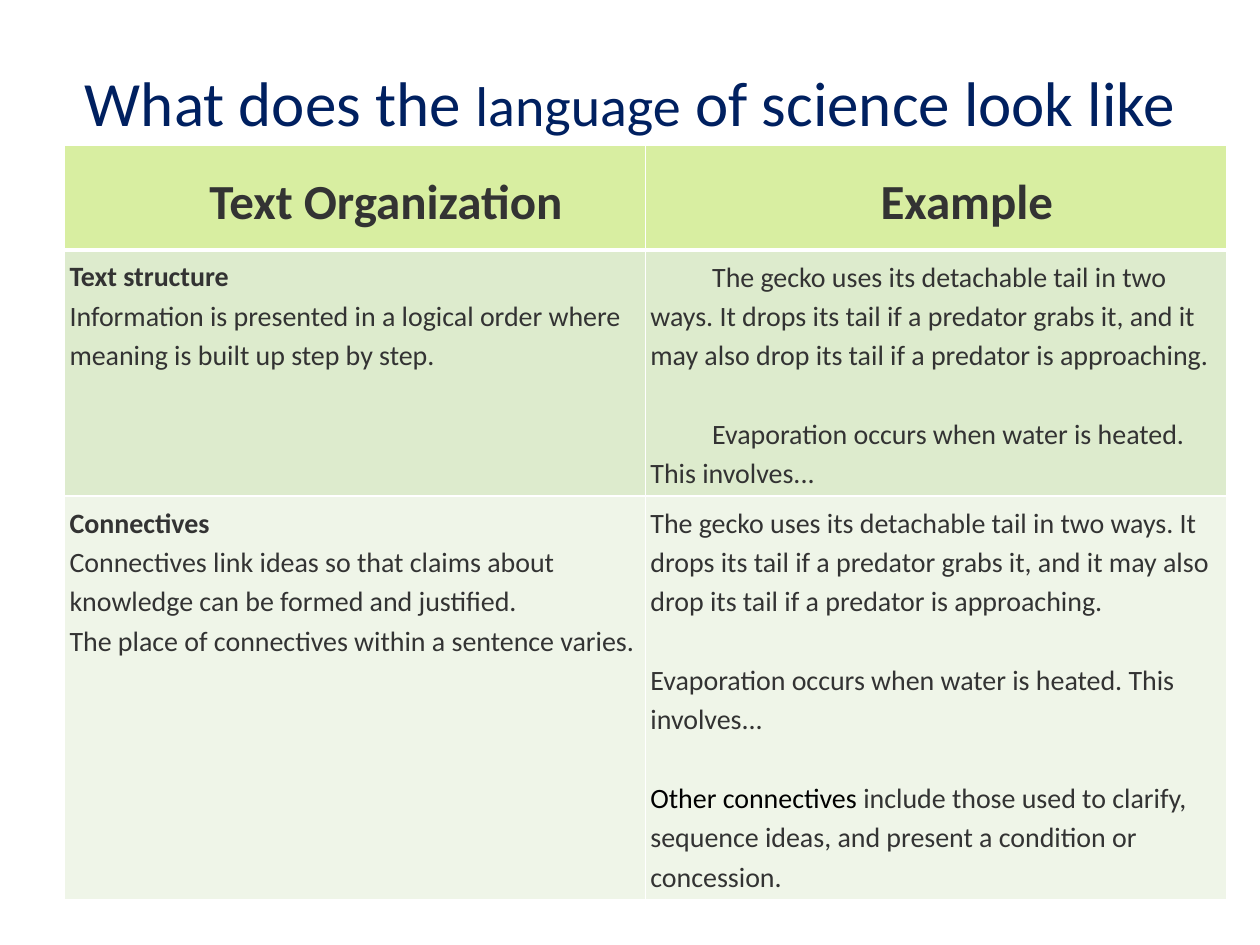
from dataclasses import dataclass, field
from lxml import etree
from pptx import Presentation
from pptx.dml.color import RGBColor
from pptx.enum import text as t
from pptx.oxml.ns import qn
from pptx.util import Pt


@dataclass(frozen=True)
class Theme:
    font: str = "Calibri"
    navy: str = "002060"
    ink: str = "333333"
    black: str = "000000"
    line: str = "FFFFFF"
    fills: tuple = ("D8EEA1", "DDEBCD", "EFF5E8")
    title: int = 36
    small: int = 32
    head: int = 28
    body: int = 16
    inset: float = 2.88
    indent: float = 35.28
    gap: float = 22.46  # one line of body text


@dataclass(frozen=True)
class Run:
    text: str
    bold: bool = False
    color: str = Theme.ink
    size: int = Theme.body


@dataclass(frozen=True)
class Para:
    runs: list
    indent: float = 0
    before: float = 0
    align: t.PP_ALIGN = t.PP_ALIGN.LEFT


@dataclass(frozen=True)
class Cell:
    paras: list = field(default_factory=list)
    anchor: t.MSO_ANCHOR = t.MSO_ANCHOR.MIDDLE


TH = Theme()
TOP = t.MSO_ANCHOR.TOP
GECKO = ("The gecko uses its detachable tail in two ways. It drops its tail if a "
         "predator grabs it, and it may also drop its tail if a predator is approaching.")
WATER = "Evaporation occurs when water is heated. This involves..."


def add_run(para, run: Run) -> None:
    part = para.add_run()
    part.text = run.text
    look = {"name": TH.font, "size": Pt(run.size), "bold": run.bold}
    for key, value in look.items():
        setattr(part.font, key, value)
    part.font.color.rgb = RGBColor.from_string(run.color)


def add_para(para, data: Para) -> None:
    look = {"alignment": data.align, "line_spacing": 1.15,
            "space_before": Pt(data.before)}
    for key, value in look.items():
        setattr(para, key, value)
    if data.indent:
        props = para._p.get_or_add_pPr()
        props.set("marL", "0")
        props.set("indent", str(Pt(data.indent)))
    for run in data.runs:
        add_run(para, run)


def add_edges(cell, foot: float) -> None:
    props = cell._tc.get_or_add_tcPr()
    widths = {"lnL": 1, "lnR": 1, "lnT": 1, "lnB": foot}
    for spot, (tag, width) in enumerate(widths.items()):
        edge = etree.Element(qn(f"a:{tag}"), w=str(Pt(width)))
        fill = etree.SubElement(edge, qn("a:solidFill"))
        etree.SubElement(fill, qn("a:srgbClr"), val=TH.line)
        props.insert(spot, edge)


def fill_cell(cell, data: Cell, color: str, foot: float) -> None:
    for side in ("left", "right", "top", "bottom"):
        setattr(cell, f"margin_{side}", Pt(TH.inset))
    cell.vertical_anchor = data.anchor
    cell.fill.solid()
    cell.fill.fore_color.rgb = RGBColor.from_string(color)
    add_edges(cell, foot)
    frame = cell.text_frame
    for num, para in enumerate(data.paras):
        add_para(frame.add_paragraph() if num else frame.paragraphs[0], para)


def head(label: str) -> Cell:
    run = Run(label, True, size=TH.head)
    return Cell([Para([run], TH.indent, align=t.PP_ALIGN.CENTER)])


def topic(name: str, *lines: str) -> Cell:
    return Cell([Para([Run(name, True)])] + [Para([Run(s)]) for s in lines], TOP)


def sample(indent: float = 0) -> list:
    return [Para([Run(GECKO)], indent), Para([Run(WATER)], indent, TH.gap)]


ROWS = [
    [head("Text Organization"), head("Example")],
    [topic("Text structure",
           "Information is presented in a logical order where meaning is built up "
           "step by step."),
     Cell(sample(TH.indent))],
    [topic("Connectives",
           "Connectives link ideas so that claims about knowledge can be formed "
           "and justified.",
           "The place of connectives within a sentence varies."),
     Cell(sample() + [Para([
         Run("Other connectives", color=TH.black),
         Run(" include those used to clarify, sequence ideas, and present a "
             "condition or concession.")], before=TH.gap)])],
]
HIGH = (59.76, 137.52, 199.44)
WIDE = 331.92


def main() -> None:
    deck = Presentation()
    deck.slide_width, deck.slide_height = Pt(720), Pt(540)
    slide = deck.slides.add_slide(deck.slide_layouts[5])

    # Title
    title = slide.shapes.title
    box = {"left": 36, "top": 21.6, "width": 648, "height": 72.72}
    for key, value in box.items():
        setattr(title, key, Pt(value))
    title.text_frame.vertical_anchor = t.MSO_ANCHOR.MIDDLE
    para = title.text_frame.paragraphs[0]
    para.alignment = t.PP_ALIGN.CENTER
    for words, size in (("What does the ", TH.title), ("language", TH.small),
                        (" of science look like", TH.title)):
        add_run(para, Run(words, color=TH.navy, size=size))

    # Table
    table = slide.shapes.add_table(len(ROWS), 2, Pt(36.9), Pt(83.2),
                                   Pt(2 * WIDE), Pt(sum(HIGH))).table
    table.first_row = table.horz_banding = False
    for col in table.columns:
        col.width = Pt(WIDE)
    for r, cells in enumerate(ROWS):
        table.rows[r].height = Pt(HIGH[r])
        for c, data in enumerate(cells):
            fill_cell(table.cell(r, c), data, TH.fills[r], 1 if r else 3)

    deck.save("out.pptx")


if __name__ == "__main__":
    main()
